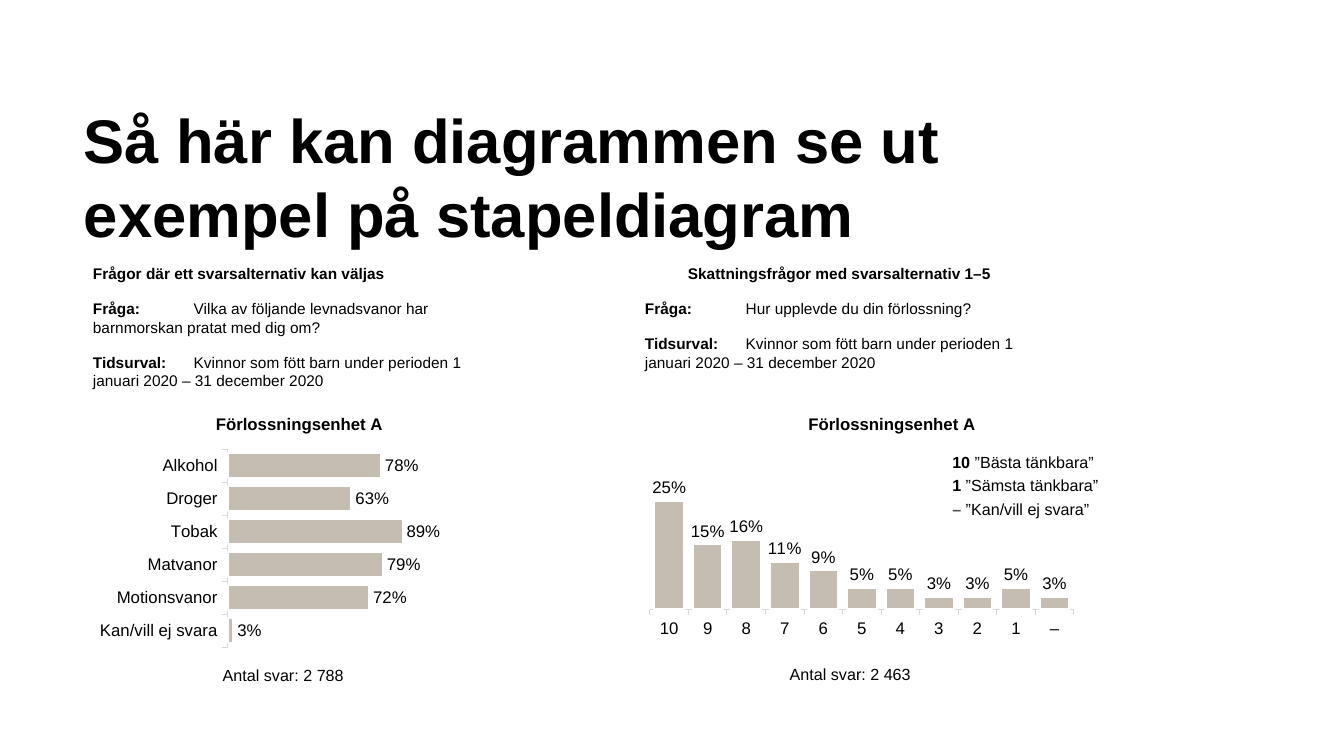
from lxml.etree import SubElement
from pptx import Presentation
from pptx.chart.data import CategoryChartData
from pptx.dml.color import RGBColor
from pptx.enum.chart import XL_CHART_TYPE, XL_LABEL_POSITION, XL_TICK_LABEL_POSITION, XL_TICK_MARK
from pptx.enum.shapes import MSO_SHAPE
from pptx.enum.text import MSO_ANCHOR, PP_ALIGN
from pptx.oxml.ns import qn
from pptx.util import Emu, Pt

COLORS = {"text": "000000", "bar": "C5BCB2", "axis": "D9D9D9", "dash": "4D5156", "white": "FFFFFF"}
FONT = "Arial"
TITLE = "Så här kan diagrammen se ut\vexempel på stapeldiagram"
UNIT = "Förlossningsenhet A"
PERIOD = ("Tidsurval: \t", "Kvinnor som fött barn under perioden 1 \tjanuari 2020 – 31 december 2020")

# Each paragraph is a pair: bold part, regular part
PANELS = [
    {
        "intro": [
            ("Frågor där ett svarsalternativ kan väljas", ""),
            ("Fråga: \t", "Vilka av följande levnadsvanor har \tbarnmorskan pratat med dig om?"),
            PERIOD,
        ],
        "intro_at": (80, 259, 412, 152),
        "heading_align": PP_ALIGN.LEFT,
        "chart_type": XL_CHART_TYPE.BAR_CLUSTERED,
        "chart_at": (16, 403, 492, 257),
        "plot": (0.43, 0.18, 0.4, 0.77),
        "maximum": 1,
        "values": {"Kan/vill ej svara": 0.03, "Motionsvanor": 0.72, "Matvanor": 0.79,
                   "Tobak": 0.89, "Droger": 0.63, "Alkohol": 0.78},
        "count": "Antal svar: 2 788 ",
        "count_at": (176, 660, 219, 29),
    },
    {
        "intro": [
            ("Skattningsfrågor med svarsalternativ 1–5", ""),
            ("Fråga: \t", "Hur upplevde du din förlossning?"),
            PERIOD,
        ],
        "intro_at": (632, 259, 412, 152),
        "heading_align": PP_ALIGN.CENTER,
        "chart_type": XL_CHART_TYPE.COLUMN_CLUSTERED,
        "chart_at": (617, 403, 471, 246),
        "plot": (0.07, 0.31, 0.9, 0.53),
        "maximum": 0.3,
        "values": {"10": 0.25, "9": 0.15, "8": 0.16, "7": 0.11, "6": 0.09, "5": 0.05,
                   "4": 0.05, "3": 0.03, "2": 0.03, "1": 0.05, "–": 0.03},
        "count": "Antal svar: 2 463 ",
        "count_at": (719, 659, 267, 29),
    },
]
SCALE_KEY = [("10", " ”Bästa tänkbara”"), ("1", " ”Sämsta tänkbara”"), ("– ", "”Kan/vill ej svara”")]
SCALE_KEY_AT = (938, 440, 195, 91)


def px(length):
    return Emu(round(length * 914400 / 100.8))


def place(bounds):
    return [px(length) for length in bounds]


def color(name):
    return RGBColor.from_string(COLORS[name])


def set_font(font, size, bold=False):
    font.name = FONT
    font.size = Pt(size)
    font.bold = bold
    font.color.rgb = color("text")


def add_text(page, bounds):
    frame = page.shapes.add_textbox(*place(bounds)).text_frame
    frame.word_wrap = True
    return frame


def fill_pairs(frame, pairs, size):
    """Write one paragraph per pair, with the first part bold."""
    for index, (label, text) in enumerate(pairs):
        para = frame.paragraphs[0] if index == 0 else frame.add_paragraph()
        para.alignment = PP_ALIGN.LEFT
        set_font(para.font, size)
        for part, bold in ((label, True), (text, False)):
            if part:
                span = para.add_run()
                span.text = part
                span.font.bold = bold
    return frame.paragraphs


def add_layout(parent, before, names, numbers, inner=False):
    """Fix a chart part at fractions of the chart area."""
    for old in parent.findall(qn("c:layout")):
        parent.remove(old)
    layout = SubElement(parent, qn("c:layout"))
    before.addprevious(layout)
    manual = SubElement(layout, qn("c:manualLayout"))
    settings = [("layoutTarget", "inner")] if inner else []
    settings += [("xMode", "edge"), ("yMode", "edge"), *zip(names, numbers)]
    for name, setting in settings:
        SubElement(manual, qn(f"c:{name}")).set("val", str(setting))


def add_panel_chart(page, panel):
    data = CategoryChartData(number_format="0%")
    data.categories = list(panel["values"])
    data.add_series(UNIT, list(panel["values"].values()))
    chart = page.shapes.add_chart(panel["chart_type"], *place(panel["chart_at"]), data).chart
    set_font(chart.font, 10)
    chart.has_legend = False

    chart.has_title = True
    title_para = chart.chart_title.text_frame.paragraphs[0]
    title_para.text = UNIT
    set_font(title_para.font, 12, True)
    chart.chart_title.include_in_layout = False
    title = chart.chart_title._element
    add_layout(title, title.find(qn("c:overlay")), ("x", "y"), (0.4, 0.03))
    plot_area = chart._chartSpace.chart.plotArea
    first = next(part for part in plot_area if part.tag != qn("c:layout"))
    add_layout(plot_area, first, ("x", "y", "w", "h"), panel["plot"], inner=True)

    values = chart.value_axis
    values.minimum_scale, values.maximum_scale = 0, panel["maximum"]
    values.has_major_gridlines = False
    values.visible = False
    categories = chart.category_axis
    categories.major_tick_mark = XL_TICK_MARK.OUTSIDE
    categories.tick_label_position = XL_TICK_LABEL_POSITION.LOW
    set_font(categories.tick_labels.font, 12)
    categories.format.line.color.rgb = color("axis")
    categories.format.line.width = Pt(0.75)

    plot = chart.plots[0]
    plot.gap_width = 30
    plot.vary_by_categories = False
    bars = plot.series[0].format
    bars.fill.solid()
    bars.fill.fore_color.rgb = color("bar")
    bars.line.color.rgb = color("white")
    bars.line.width = Pt(1.5)
    plot.has_data_labels = True
    labels = plot.data_labels
    labels.show_value = True
    labels.position = XL_LABEL_POSITION.OUTSIDE_END
    labels.number_format, labels.number_format_is_linked = "0%", False
    set_font(labels.font, 12)


def add_panel(page, panel):
    paras = fill_pairs(add_text(page, panel["intro_at"]), panel["intro"], 11)
    paras[0].alignment = panel["heading_align"]
    for para in paras:
        para.space_after = Pt(12)
        properties = para._p.get_or_add_pPr()
        properties.set("marL", str(px(3)))
        properties.set("indent", "0")
    add_panel_chart(page, panel)
    count = add_text(page, panel["count_at"]).paragraphs[0]
    count.text = panel["count"]
    count.alignment = PP_ALIGN.CENTER
    set_font(count.font, 11.5)


def add_scale_key(page):
    box = page.shapes.add_shape(MSO_SHAPE.ROUNDED_RECTANGLE, *place(SCALE_KEY_AT))
    box.shadow.inherit = False
    box.fill.solid()
    box.fill.fore_color.rgb = color("white")
    box.line.fill.background()
    box.text_frame.word_wrap = True
    box.text_frame.vertical_anchor = MSO_ANCHOR.MIDDLE
    paras = fill_pairs(box.text_frame, SCALE_KEY, 11.5)
    for para in paras[1:]:
        para.space_before = Pt(3)
    paras[-1].runs[0].font.color.rgb = color("dash")


def main():
    deck = Presentation()
    deck.slide_width, deck.slide_height = px(1344), px(756)
    page = deck.slides.add_slide(deck.slide_layouts[6])
    title = add_text(page, (74, 97, 1059, 136)).paragraphs[0]
    title.text = TITLE
    set_font(title.font, 44, True)
    for panel in PANELS:
        add_panel(page, panel)
    add_scale_key(page)
    deck.save("out.pptx")


if __name__ == "__main__":
    main()
